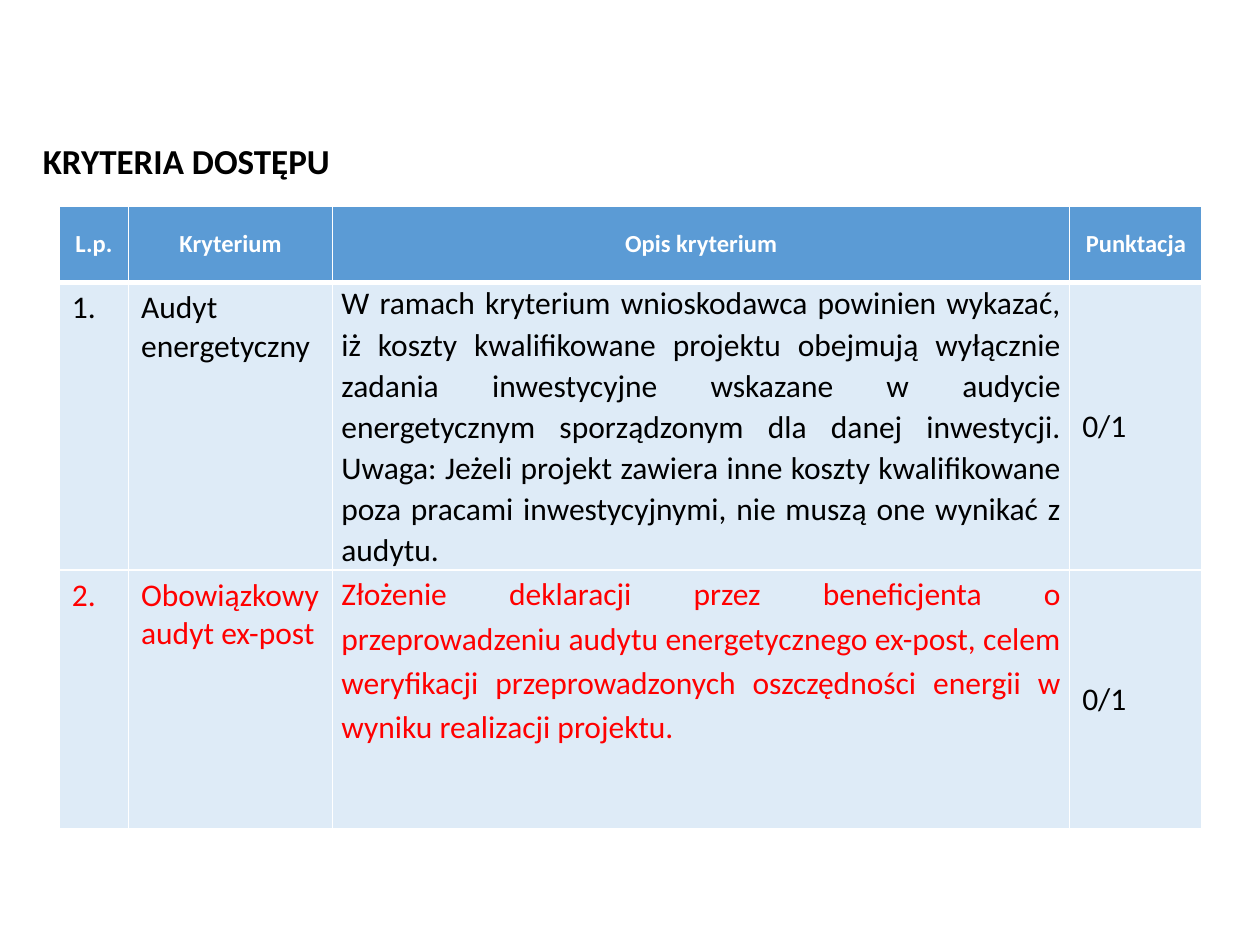
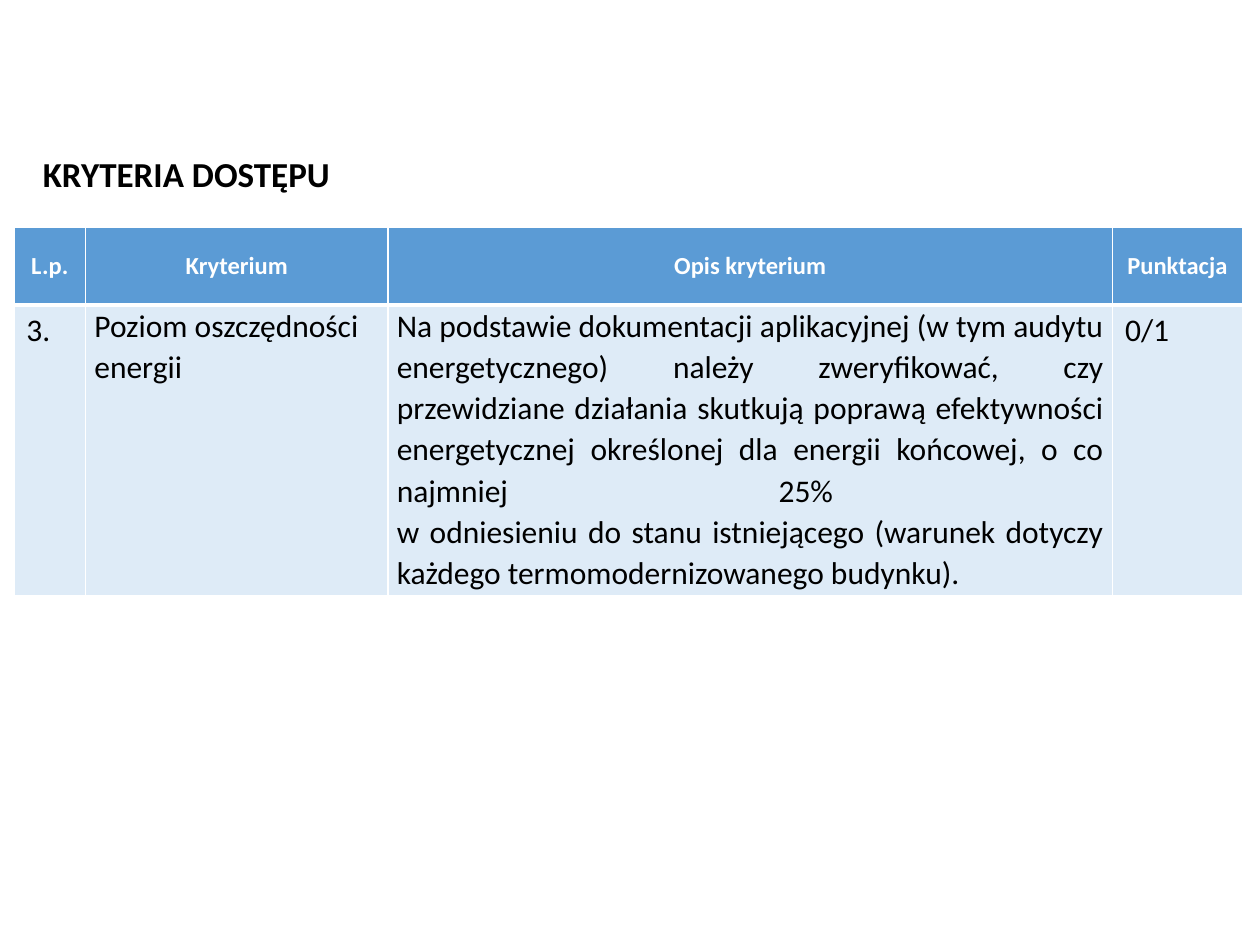
from lxml import etree
from pptx import Presentation
from pptx.dml.color import RGBColor
from pptx.enum.text import MSO_ANCHOR, MSO_AUTO_SIZE, PP_ALIGN
from pptx.oxml.ns import qn
from pptx.util import Inches, Pt

TOP, MIDDLE = MSO_ANCHOR.TOP, MSO_ANCHOR.MIDDLE
LEFT, CENTER, JUSTIFY = PP_ALIGN.LEFT, PP_ALIGN.CENTER, PP_ALIGN.JUSTIFY
FIXED = MSO_AUTO_SIZE.NONE
TITLE_ONLY = 5
FONT = "Calibri"
COLORS = {
    "head": "5B9BD5",
    "body": "DEEBF7",
    "white": "FFFFFF",
    "text": "000000",
    "red": "FF0000",
}
TITLE = "KRYTERIA DOSTĘPU"
HEADS = ["L.p.", "Kryterium", "Opis kryterium", "Punktacja"]
AUDIT = (
    "W ramach kryterium wnioskodawca powinien wykazać, iż koszty kwalifikowane "
    "projektu obejmują wyłącznie zadania inwestycyjne wskazane w audycie "
    "energetycznym sporządzonym dla danej inwestycji. Uwaga: Jeżeli projekt "
    "zawiera inne koszty kwalifikowane poza pracami inwestycyjnymi, nie muszą "
    "one wynikać z audytu."
)
EX_POST = (
    "Złożenie deklaracji przez beneficjenta o przeprowadzeniu audytu "
    "energetycznego ex-post, celem weryfikacji przeprowadzonych oszczędności "
    "energii w wyniku realizacji projektu."
)
SAVINGS = (
    "Na podstawie dokumentacji aplikacyjnej (w tym audytu energetycznego) "
    "należy zweryfikować, czy przewidziane działania skutkują poprawą "
    "efektywności energetycznej określonej dla energii końcowej, o co "
    "najmniej 25% \vw odniesieniu do stanu istniejącego (warunek dotyczy "
    "każdego termomodernizowanego budynku)."
)


class Deck:
    def __init__(self):
        self.prs = Presentation()
        self.prs.slide_width = Inches(10)
        self.prs.slide_height = Inches(7.5)
        self.slide = None

    def style(self, para, size, color, bold=False):
        for run in para.runs:
            run.font.name = FONT
            run.font.size = Pt(size)
            run.font.bold = bold
            run.font.color.rgb = RGBColor.from_string(COLORS[color])

    def title(self, top):
        layout = self.prs.slide_layouts[TITLE_ONLY]
        self.slide = self.prs.slides.add_slide(layout)
        shape = self.slide.shapes.title
        shape.left, shape.top = Inches(0.24), Inches(top)
        shape.width, shape.height = Inches(3.7), Inches(0.44)
        frame = shape.text_frame
        frame.text = TITLE
        frame.word_wrap = True
        frame.auto_size = FIXED
        frame.vertical_anchor = MIDDLE
        para = frame.paragraphs[0]
        para.alignment = LEFT
        self.style(para, 20, "text", True)

    def borders(self, cell, over, under):
        props = cell._tc.get_or_add_tcPr()
        for side, width in (("L", 1), ("R", 1), ("T", over), ("B", under)):
            line = etree.SubElement(props, qn(f"a:ln{side}"), w=str(Pt(width)))
            fill = etree.SubElement(line, qn("a:solidFill"))
            etree.SubElement(fill, qn("a:srgbClr"), val=COLORS["white"])

    def cell(self, cell, text, fill, size, color, bold=False,
             align=LEFT, anchor=TOP, lines=None, over=1, under=1):
        self.borders(cell, over, under)
        cell.fill.solid()
        cell.fill.fore_color.rgb = RGBColor.from_string(COLORS[fill])
        cell.text_frame.text = text
        cell.vertical_anchor = anchor
        para = cell.text_frame.paragraphs[0]
        para.alignment = align
        if lines:
            cell.margin_left = cell.margin_right = Inches(0.07)
            cell.margin_top = cell.margin_bottom = 0
            para.line_spacing = lines
            para.space_after = Pt(6)
        self.style(para, size, color, bold)

    def table(self, left, top, widths, heights, rows, anchor):
        frame = self.slide.shapes.add_table(
            len(heights), len(widths), Inches(left), Inches(top),
            Inches(sum(widths)), Inches(sum(heights)))
        grid = frame.table
        for col, width in zip(grid.columns, widths):
            col.width = Inches(width)
        for row, height in zip(grid.rows, heights):
            row.height = Inches(height)
        for col, head in enumerate(HEADS):
            self.cell(grid.cell(0, col), head, "head", 14, "white", True,
                      CENTER, MIDDLE, under=3)
        for num, (texts, color, spacing) in enumerate(rows, 1):
            for col, text in enumerate(texts):
                score = col == 3
                self.cell(grid.cell(num, col), text, "body", 18,
                          "text" if score else color,
                          align=JUSTIFY if col == 2 else LEFT,
                          anchor=anchor if score else TOP,
                          lines=spacing.get(col),
                          over=3 if num == 1 else 1)


def main():
    deck = Deck()
    deck.title(1.05)
    deck.table(0.47, 1.64, [0.55, 1.62, 5.85, 1.05], [0.6, 2.18, 2.05], [
        (["1.", "Audyt energetyczny", AUDIT, "0/1"], "text", {2: 1.07}),
        (["2.", "Obowiązkowy audyt ex-post", EX_POST, "0/1"], "red", {2: 1.15}),
    ], MIDDLE)
    deck.title(1.16)
    deck.table(0.11, 1.8, [0.57, 2.4, 5.75, 1.03], [0.62, 2.31], [
        (["3.", "Poziom oszczędności energii", SAVINGS, "0/1"], "text",
         {1: 1.07, 2: 1.07}),
    ], TOP)
    deck.prs.save("out.pptx")


if __name__ == "__main__":
    main()
